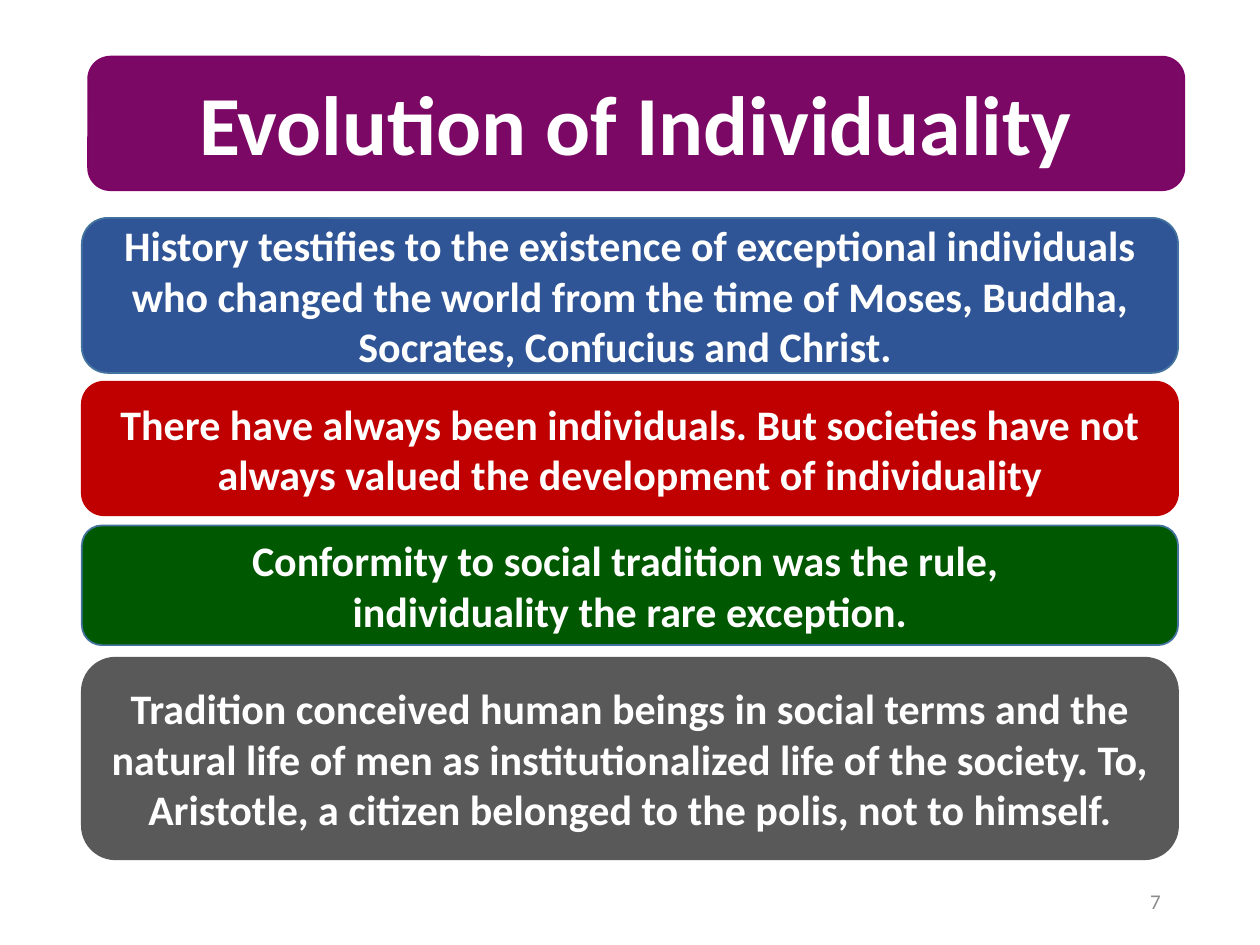
from dataclasses import dataclass
from pptx import Presentation as Deck
from pptx.dml.color import RGBColor as Color
from pptx.enum.shapes import MSO_SHAPE as Kind
from pptx.enum.text import MSO_ANCHOR as Anchor, PP_ALIGN as Align
from pptx.util import Inches, Pt


@dataclass(frozen=True)
class Theme:
    font: str = "Calibri"
    white: str = "FFFFFF"
    grey: str = "8C8C8C"
    plum: str = "7A0864"
    rim: str = "7F0367"
    blue: str = "2F5597"
    edge: str = "43739E"
    red: str = "C00000"
    green: str = "005800"
    slate: str = "595959"
    title: int = 48
    body: int = 24
    small: int = 12


class Page:
    def __init__(self, slide, theme):
        self.slide = slide
        self.theme = theme

    def letter(self, shape, text, size, color, align, bold, space=None):
        frame = shape.text_frame
        frame.word_wrap = True
        frame.vertical_anchor = Anchor.MIDDLE
        para = frame.paragraphs[0]
        para.text = text
        para.alignment = align
        para.line_spacing = space
        font = para.font
        font.name = self.theme.font
        font.size = Pt(size)
        font.bold = bold
        font.color.rgb = Color.from_string(color)

    def panel(self, box, fill, line, text=None):
        shape = self.slide.shapes.add_shape(
            Kind.FLOWCHART_ALTERNATE_PROCESS, *map(Inches, box))
        shape.shadow.inherit = False
        shape.fill.solid()
        shape.fill.fore_color.rgb = Color.from_string(fill)
        shape.line.color.rgb = Color.from_string(line)
        shape.line.width = Pt(1)
        if text:
            self.letter(shape, text, self.theme.body, self.theme.white,
                        Align.CENTER, True)

    def label(self, box, text, size, color, align, bold=False, space=None):
        shape = self.slide.shapes.add_textbox(*map(Inches, box))
        self.letter(shape, text, size, color, align, bold, space)


def main():
    deck = Deck()
    deck.slide_width, deck.slide_height = Inches(10), Inches(7.5)
    theme = Theme()
    page = Page(deck.slides.add_slide(deck.slide_layouts[6]), theme)

    page.panel((0.7, 0.45, 8.7, 1.06), theme.plum, theme.rim)
    page.label((0.69, 0.29, 8.71, 1.45), "Evolution of Individuality",
               theme.title, theme.white, Align.CENTER, True, 0.9)
    page.label((7.06, 6.95, 2.25, 0.4), "7",
               theme.small, theme.grey, Align.RIGHT)

    points = [
        (1.73, 1.23, theme.blue, theme.edge,
         "History testifies to the existence of exceptional individuals who "
         "changed the world from the time of Moses, Buddha, Socrates, "
         "Confucius and Christ. "),
        (3.03, 1.06, theme.red, theme.red,
         "There have always been individuals. But societies have not always "
         "valued the development of individuality"),
        (4.17, 0.95, theme.green, theme.edge,
         "Conformity to social tradition was the rule, \n"
         "individuality the rare exception."),
        (5.22, 1.6, theme.slate, theme.slate,
         "Tradition conceived human beings in social terms and the natural "
         "life of men as institutionalized life of the society. To, "
         "Aristotle, a citizen belonged to the polis, not to himself."),
    ]
    for top, height, fill, line, text in points:
        page.panel((0.65, top, 8.7, height), fill, line, text)

    deck.save("out.pptx")


if __name__ == "__main__":
    main()
